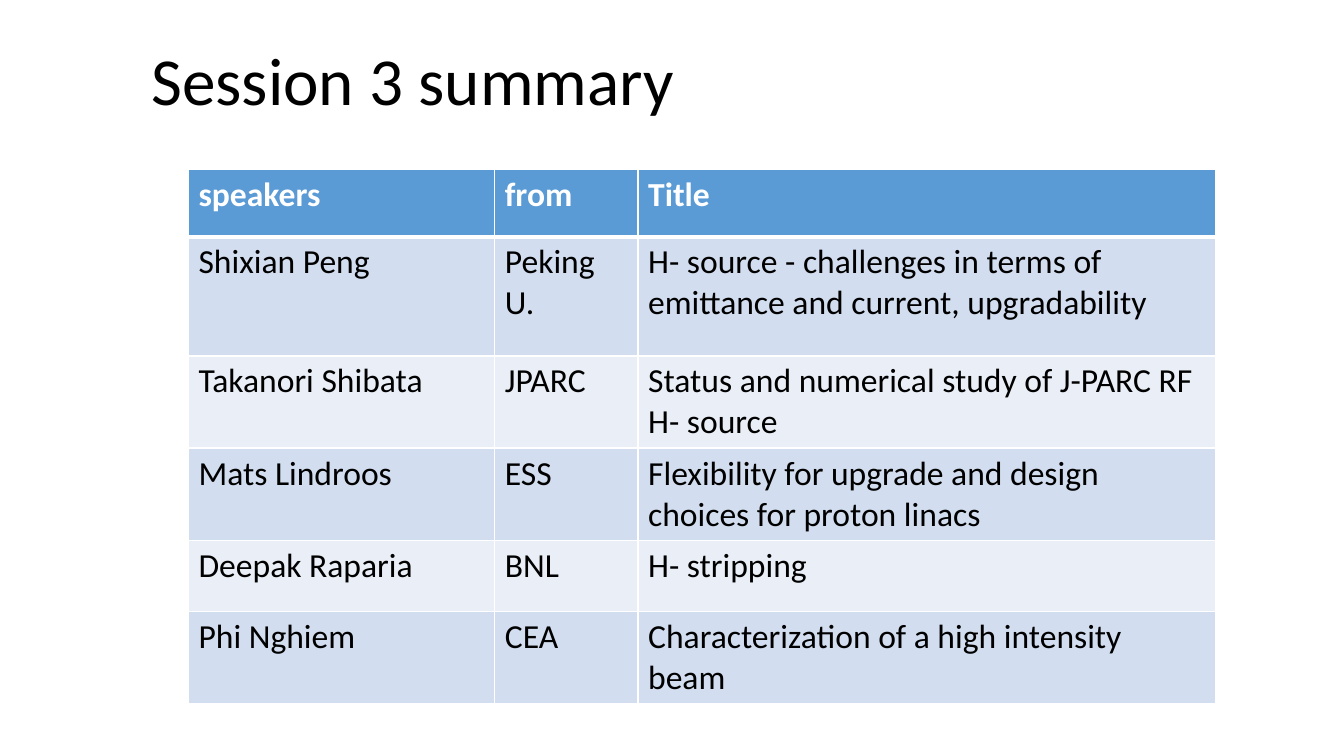
from lxml.etree import SubElement
from pptx import Presentation
from pptx.dml.color import RGBColor
from pptx.enum.text import MSO_ANCHOR, PP_ALIGN
from pptx.oxml.ns import qn
from pptx.util import Cm, Pt

COLOURS = {
    "header": "5B9BD5",
    "odd": "D2DEEF",
    "even": "EAEFF7",
    "border": "FFFFFF",
    "header_text": "FFFFFF",
    "text": "000000",
}
FONT = "Calibri"
COLUMN_WIDTHS = [7.72, 3.61, 14.55]
ROW_HEIGHTS = [1.7, 3, 1.8, 1.8, 1.8, 1.04]
TALKS = [
    ("speakers", "from", "Title"),
    ("Shixian Peng", "Peking U.",
     "H- source - challenges in terms of emittance and current, upgradability"),
    ("Takanori Shibata", "JPARC",
     "Status and numerical study of J-PARC RF H- source"),
    ("Mats Lindroos", "ESS",
     "Flexibility for upgrade and design choices for proton linacs"),
    ("Deepak Raparia", "BNL", "H- stripping"),
    ("Phi Nghiem", "CEA", "Characterization of a high intensity beam"),
]


def colour(key):
    return RGBColor.from_string(COLOURS[key])


def add_run(paragraph, wording, size, colour_key, bold=False):
    run = paragraph.add_run()
    run.text = wording
    run.font.name = FONT
    run.font.size = Pt(size)
    run.font.bold = bold
    run.font.color.rgb = colour(colour_key)


def set_borders(cell, row):
    properties = cell._tc.get_or_add_tcPr()
    widths = {"L": 1, "R": 1, "T": 3 if row == 1 else 1, "B": 3 if row == 0 else 1}
    for side, width in widths.items():
        line = SubElement(properties, qn(f"a:ln{side}"), w=str(Pt(width)))
        fill = SubElement(line, qn("a:solidFill"))
        SubElement(fill, qn("a:srgbClr"), val=COLOURS["border"])


def add_title(slide, wording):
    title = slide.shapes.title
    title.left, title.top, title.width, title.height = (
        Cm(3.56), Cm(0.84), Cm(16), Cm(2.31))
    frame = title.text_frame
    frame.word_wrap = True
    frame.vertical_anchor = MSO_ANCHOR.TOP
    heading = frame.paragraphs[0]
    heading.alignment = PP_ALIGN.LEFT
    add_run(heading, wording, 48, "text")


def fill_cell(cell, wording, row):
    set_borders(cell, row)
    cell.fill.solid()
    band = "header" if row == 0 else "odd" if row % 2 else "even"
    cell.fill.fore_color.rgb = colour(band)
    text_colour = "header_text" if row == 0 else "text"
    add_run(cell.text_frame.paragraphs[0], wording, 24, text_colour, row == 0)


def add_talks(slide):
    talks = slide.shapes.add_table(
        len(ROW_HEIGHTS), len(COLUMN_WIDTHS), Cm(4.75), Cm(4.27),
        Cm(sum(COLUMN_WIDTHS)), Cm(sum(ROW_HEIGHTS))).table
    for column, width in zip(talks.columns, COLUMN_WIDTHS):
        column.width = Cm(width)
    for row, (height, talk) in enumerate(zip(ROW_HEIGHTS, TALKS)):
        talks.rows[row].height = Cm(height)
        for column, wording in enumerate(talk):
            fill_cell(talks.cell(row, column), wording, row)


def main():
    presentation = Presentation()
    presentation.slide_width = Cm(33.87)
    presentation.slide_height = Cm(19.05)
    slide = presentation.slides.add_slide(presentation.slide_layouts[5])
    add_title(slide, "Session 3 summary")
    add_talks(slide)
    presentation.save("out.pptx")


if __name__ == "__main__":
    main()
